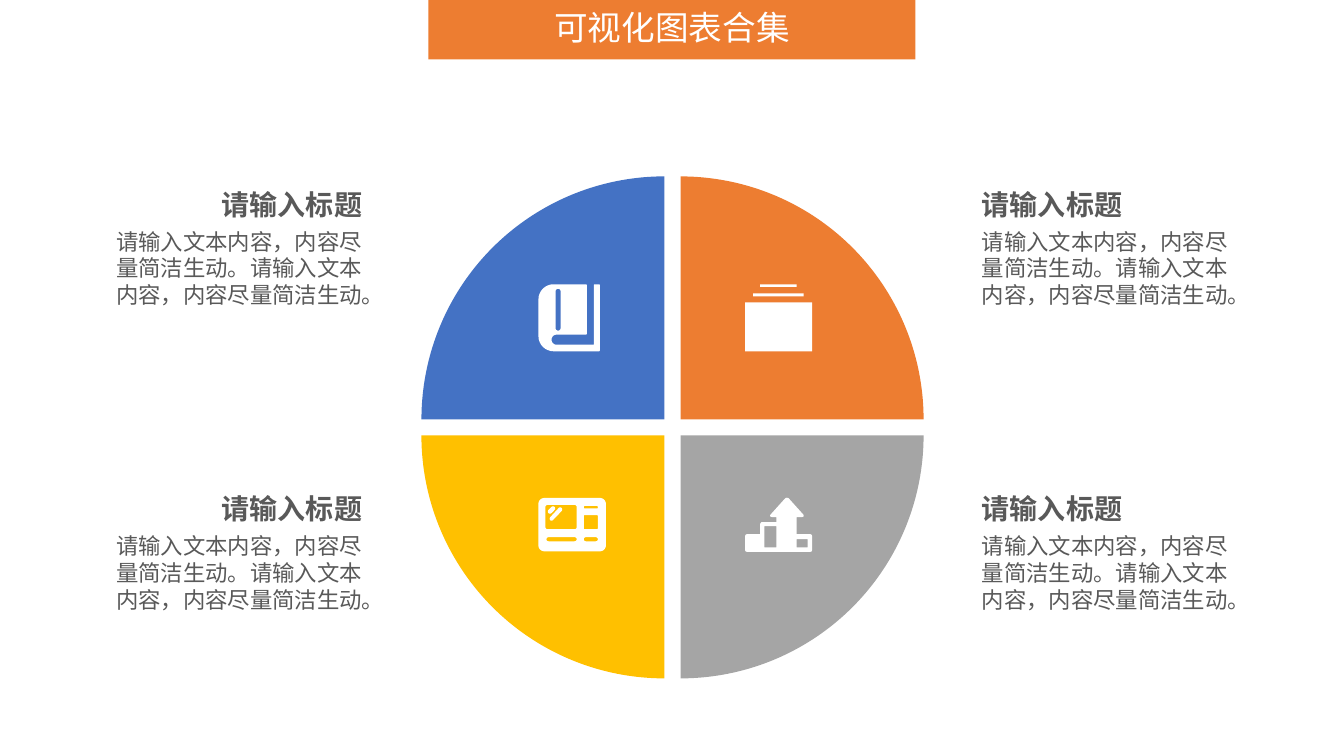
import lxml.etree
import pptx
import pptx.dml.color
import pptx.enum.shapes
import pptx.enum.text
import pptx.oxml.ns
import pptx.util

Inches = pptx.util.Inches
RGBColor = pptx.dml.color.RGBColor
ALIGN = pptx.enum.text.PP_ALIGN
SHAPE = pptx.enum.shapes.MSO_SHAPE

BLUE = RGBColor(0x44, 0x72, 0xC4)
ORANGE = RGBColor(0xED, 0x7D, 0x31)
YELLOW = RGBColor(0xFF, 0xC0, 0x00)
GRAY = RGBColor(0xA5, 0xA5, 0xA5)
WHITE = RGBColor(0xFF, 0xFF, 0xFF)
TEXT = RGBColor(0x59, 0x59, 0x59)

CJK_FONT = "Noto Sans CJK SC"
HEADING = "请输入标题"
BODY = "请输入文本内容，内容尽量简洁生动。请输入文本内容，内容尽量简洁生动。"


def paint(shape, color):
    shape.shadow.inherit = False
    shape.fill.solid()
    shape.fill.fore_color.rgb = color
    shape.line.fill.background()


def add_text(s, box, text, size, color, align, font=CJK_FONT, bold=False):
    tf = s.shapes.add_textbox(*map(Inches, box)).text_frame
    tf.word_wrap = True
    tf.text = text
    p = tf.paragraphs[0]
    p.alignment = align
    r = p.runs[0]
    r.font.size = pptx.util.Pt(size)
    r.font.bold = bold
    r.font.name = font
    r.font.color.rgb = color
    # East Asian typeface follows the Latin one in the run properties
    ea = lxml.etree.SubElement(r.font._element, pptx.oxml.ns.qn("a:ea"))
    ea.set("typeface", CJK_FONT)


# Icon outlines, in hundredths of an inch
def rounded(*corners):
    """Polygon of (x, y, radius) corners, each corner sampled as a curve."""
    points = []
    for i, (x, y, radius) in enumerate(corners):
        if not radius:
            points.append((x, y))
            continue
        ends = []
        for nx, ny, _ in (corners[i - 1], corners[(i + 1) % len(corners)]):
            share = radius / ((nx - x) ** 2 + (ny - y) ** 2) ** 0.5
            ends.append((x + (nx - x) * share, y + (ny - y) * share))
        (ax, ay), (bx, by) = ends
        for step in range(9):
            t = step / 8
            a = (1 - t) ** 3 + 1.35 * t * (1 - t) ** 2
            b = t ** 3 + 1.35 * t ** 2 * (1 - t)
            points.append((a * ax + b * bx + (1 - a - b) * x,
                           a * ay + b * by + (1 - a - b) * y))
    return points


def bar(x, y, w, h, radius=0):
    return rounded((x, y, radius), (x + w, y, radius),
                   (x + w, y + h, radius), (x, y + h, radius))


BOOK = [
    rounded((0, 0, 15), (48, 0, 1), (48, 50, 1), (13, 50, 5), (13, 60, 5),
            (55, 60, 0), (55, 0, 1), (61, 0, 1), (61, 66.5, 1), (0, 66.5, 15)),
    bar(17, 4.5, 5, 41.5, 2.5),
]
STACK = [bar(0, 18, 66.5, 48.5), bar(8, 9, 50, 3), bar(15, 0, 36, 2.5)]
CARD = [
    bar(0, 0, 67, 53, 6),
    bar(7, 7, 31, 24, 2),
    rounded((8.5, 13.5, 2), (14.5, 7.5, 2), (17.5, 10.5, 2), (11.5, 16.5, 2)),
    rounded((10.5, 20.5, 2), (21.5, 8.5, 2), (24.5, 11.5, 2), (13, 23.5, 2)),
    bar(45, 8, 14, 2.5, 1),
    bar(45, 17, 14, 14, 1),
    bar(45, 39, 14, 4, 2),
    bar(8, 39, 30, 4, 2),
]
GROWTH = [
    rounded((0, 36, 2), (15, 36, 0), (15, 24, 2), (31, 24, 0), (31, 19, 0),
            (23, 19, 4), (41.5, -1.5, 3), (60, 19, 4), (51, 19, 0),
            (51, 36, 0), (66.5, 36, 2), (66.5, 53.5, 2), (0, 53.5, 2)),
    bar(19, 28, 12, 21),
    bar(51, 41, 11, 8),
]


def add_icon(s, left, top, contours):
    placed = [[(Inches(left + x / 100), Inches(top + y / 100)) for x, y in c]
              for c in contours]
    builder = s.shapes.build_freeform(*placed[0][0])
    builder.add_line_segments(placed[0][1:])
    for contour in placed[1:]:
        builder.move_to(*contour[0])
        builder.add_line_segments(contour[1:])
    paint(builder.convert_to_shape(), WHITE)


def add_banner(s, left, top, width, height):
    paint(s.shapes.add_shape(SHAPE.RECTANGLE, *map(Inches, (left, top, width, height))), ORANGE)
    add_text(s, (left + 0.33, top + 0.05, width - 0.66, 0.5),
             "可视化图表合集", 24, WHITE, ALIGN.CENTER)


def add_wheel(s, left, top, diameter, gap):
    # Column, row, start angle, colour, icon and its vertical offset
    quarters = [(1, 0, 270, ORANGE, STACK, 1.07), (1, 1, 0, GRAY, GROWTH, 3.19),
                (0, 1, 90, YELLOW, CARD, 3.19), (0, 0, 180, BLUE, BOOK, 1.07)]
    for col, row, start, color, icon, drop in quarters:
        pie = s.shapes.add_shape(SHAPE.PIE, Inches(left + col * gap), Inches(top + row * gap),
                                 Inches(diameter), Inches(diameter))
        # Angles are stored in 60000ths of a degree, adjustments in 100000ths
        pie.adjustments[0] = start * 0.6
        pie.adjustments[1] = (start + 90) % 360 * 0.6
        paint(pie, color)
        add_icon(s, left + 1.16 + col * 2.05, top + drop, icon)


def add_caption(s, left, top, width, align):
    heading_width = 1.59
    indent = width - heading_width if align == ALIGN.RIGHT else 0
    add_text(s, (left + indent, top, heading_width, 0.44), HEADING, 20, TEXT, align, bold=True)
    add_text(s, (left, top + 0.4, width, 1.21), BODY, 16, TEXT, align, font="Arial")


def main():
    prs = pptx.Presentation()
    prs.slide_width, prs.slide_height = Inches(13.33), Inches(7.5)
    s = prs.slides.add_slide(prs.slide_layouts[6])
    add_banner(s, 4.25, -0.03, 4.83, 0.62)
    add_wheel(s, 4.18, 1.75, 4.82, 0.16)
    for left, align in ((0.96, ALIGN.RIGHT), (9.64, ALIGN.LEFT)):
        for top in (1.81, 4.83):
            add_caption(s, left, top, 2.73, align)
    prs.save("out.pptx")


if __name__ == "__main__":
    main()
